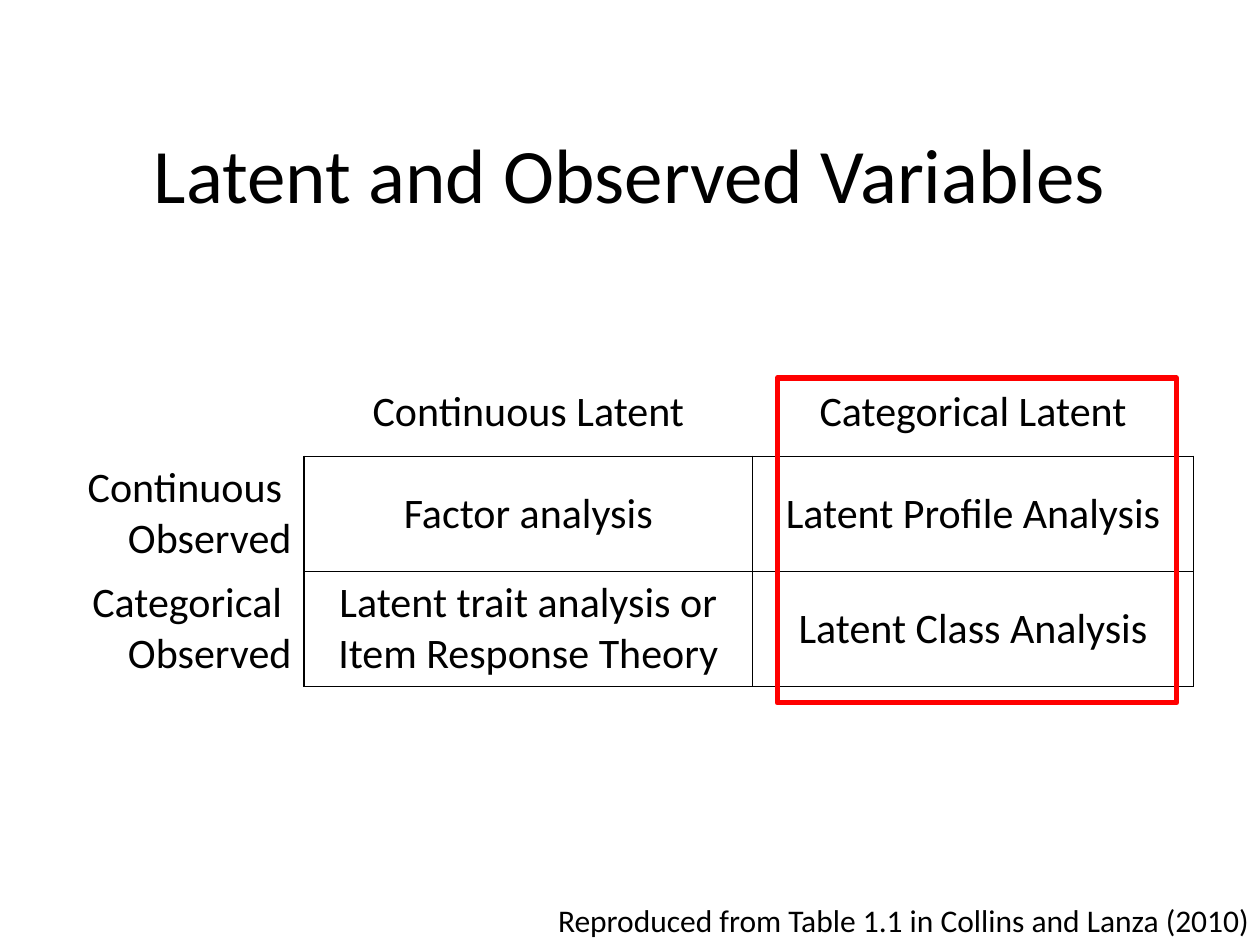
from dataclasses import dataclass

from lxml import etree
from pptx import Presentation
from pptx.dml.color import RGBColor
from pptx.enum.shapes import MSO_SHAPE
from pptx.enum.text import MSO_ANCHOR, PP_ALIGN
from pptx.oxml.ns import qn
from pptx.slide import Slide
from pptx.table import _Cell
from pptx.text.text import TextFrame
from pptx.util import Cm, Pt

RECTANGLE = MSO_SHAPE.RECTANGLE
MIDDLE, TOP = MSO_ANCHOR.MIDDLE, MSO_ANCHOR.TOP
LEFT, CENTER, RIGHT = PP_ALIGN.LEFT, PP_ALIGN.CENTER, PP_ALIGN.RIGHT

COLORS = {"background": "FFFFFF", "text": "000000", "grid": "000000", "highlight": "FF0000"}
FONT = "Calibri"
COLUMN_WIDTHS = (5.13, 9.04, 8.89)
ROW_HEIGHTS = (1.78, 2.32, 2.32)
METHODS = (
    ("", "Continuous Latent", "Categorical Latent"),
    ("Continuous \nObserved", "Factor analysis", "Latent Profile Analysis"),
    ("Categorical \nObserved", "Latent trait analysis or\nItem Response Theory",
     "Latent Class Analysis"),
)


@dataclass(frozen=True)
class Box:
    """Position and size in centimetres."""
    left: float
    top: float
    width: float
    height: float

    def lengths(self) -> tuple[Cm, Cm, Cm, Cm]:
        return Cm(self.left), Cm(self.top), Cm(self.width), Cm(self.height)


@dataclass(frozen=True)
class Label:
    text: str
    box: Box
    size: int
    align: PP_ALIGN
    anchor: MSO_ANCHOR
    wrap: bool


LABELS = (
    Label("Latent and Observed Variables", Box(1.27, 2.11, 22.86, 2.74), 44, CENTER, MIDDLE, True),
    Label("Reproduced from Table 1.1 in Collins and Lanza (2010)",
          Box(11, 18.03, 14.63, 1.02), 18, LEFT, TOP, False),
)
TABLE_BOX = Box(1, 7.42, sum(COLUMN_WIDTHS), sum(ROW_HEIGHTS))
HIGHLIGHT_BOX = Box(15.67, 7.62, 8.05, 6.55)


def write(frame: TextFrame, text: str, size: int, align: PP_ALIGN) -> None:
    """Fill the frame with one paragraph for each line of text."""
    frame.text = text
    for paragraph in frame.paragraphs:
        paragraph.alignment = align
        paragraph.font.name = FONT
        paragraph.font.size = Pt(size)
        paragraph.font.color.rgb = RGBColor.from_string(COLORS["text"])


def add_label(slide: Slide, label: Label) -> None:
    frame = slide.shapes.add_textbox(*label.box.lengths()).text_frame
    frame.word_wrap = label.wrap
    frame.vertical_anchor = label.anchor
    write(frame, label.text, label.size, label.align)


def set_borders(cell: _Cell, visible: dict[str, bool]) -> None:
    """Draw the visible sides (L, R, T, B) and clear the others."""
    properties = cell._tc.get_or_add_tcPr()
    for position, (side, shown) in enumerate(visible.items()):
        line = etree.Element(qn(f"a:ln{side}"), w=str(Pt(1)))
        if shown:
            fill = etree.SubElement(line, qn("a:solidFill"))
            etree.SubElement(fill, qn("a:srgbClr"), val=COLORS["grid"])
        else:
            etree.SubElement(line, qn("a:noFill"))
        properties.insert(position, line)


def add_methods_table(slide: Slide) -> None:
    table = slide.shapes.add_table(
        len(ROW_HEIGHTS), len(COLUMN_WIDTHS), *TABLE_BOX.lengths()).table
    table.first_row = table.horz_banding = False
    for column, width in zip(table.columns, COLUMN_WIDTHS):
        column.width = Cm(width)
    for row, height in zip(table.rows, ROW_HEIGHTS):
        row.height = Cm(height)
    for r, texts in enumerate(METHODS):
        for c, text in enumerate(texts):
            cell = table.cell(r, c)
            cell.fill.background()
            cell.vertical_anchor = MIDDLE
            write(cell.text_frame, text, 24, CENTER if c else RIGHT)
            boxed = r > 0 and c > 0
            set_borders(cell, {"L": boxed, "R": r > 0, "T": boxed, "B": c > 0})


def add_highlight(slide: Slide) -> None:
    highlight = slide.shapes.add_shape(RECTANGLE, *HIGHLIGHT_BOX.lengths())
    highlight.shadow.inherit = False
    highlight.fill.background()
    highlight.line.color.rgb = RGBColor.from_string(COLORS["highlight"])
    highlight.line.width = Pt(3)
    etree.SubElement(highlight.line._ln, qn("a:round"))


def main() -> None:
    presentation = Presentation()
    presentation.slide_width, presentation.slide_height = Cm(25.4), Cm(19.05)
    slide = presentation.slides.add_slide(presentation.slide_layouts[6])
    slide.background.fill.solid()
    slide.background.fill.fore_color.rgb = RGBColor.from_string(COLORS["background"])
    title, citation = LABELS
    add_label(slide, title)
    add_methods_table(slide)
    add_label(slide, citation)
    add_highlight(slide)
    presentation.save("out.pptx")


if __name__ == "__main__":
    main()
